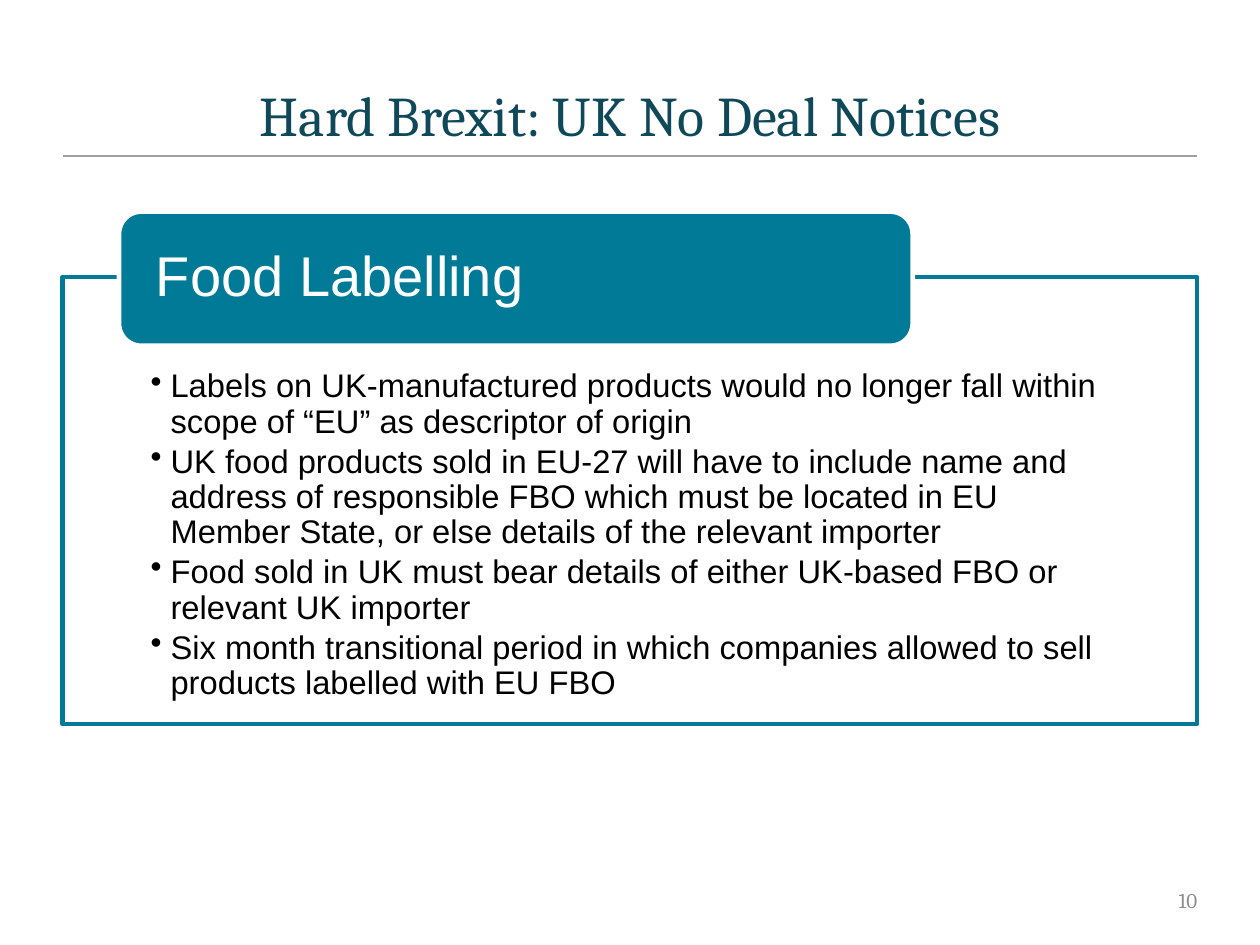
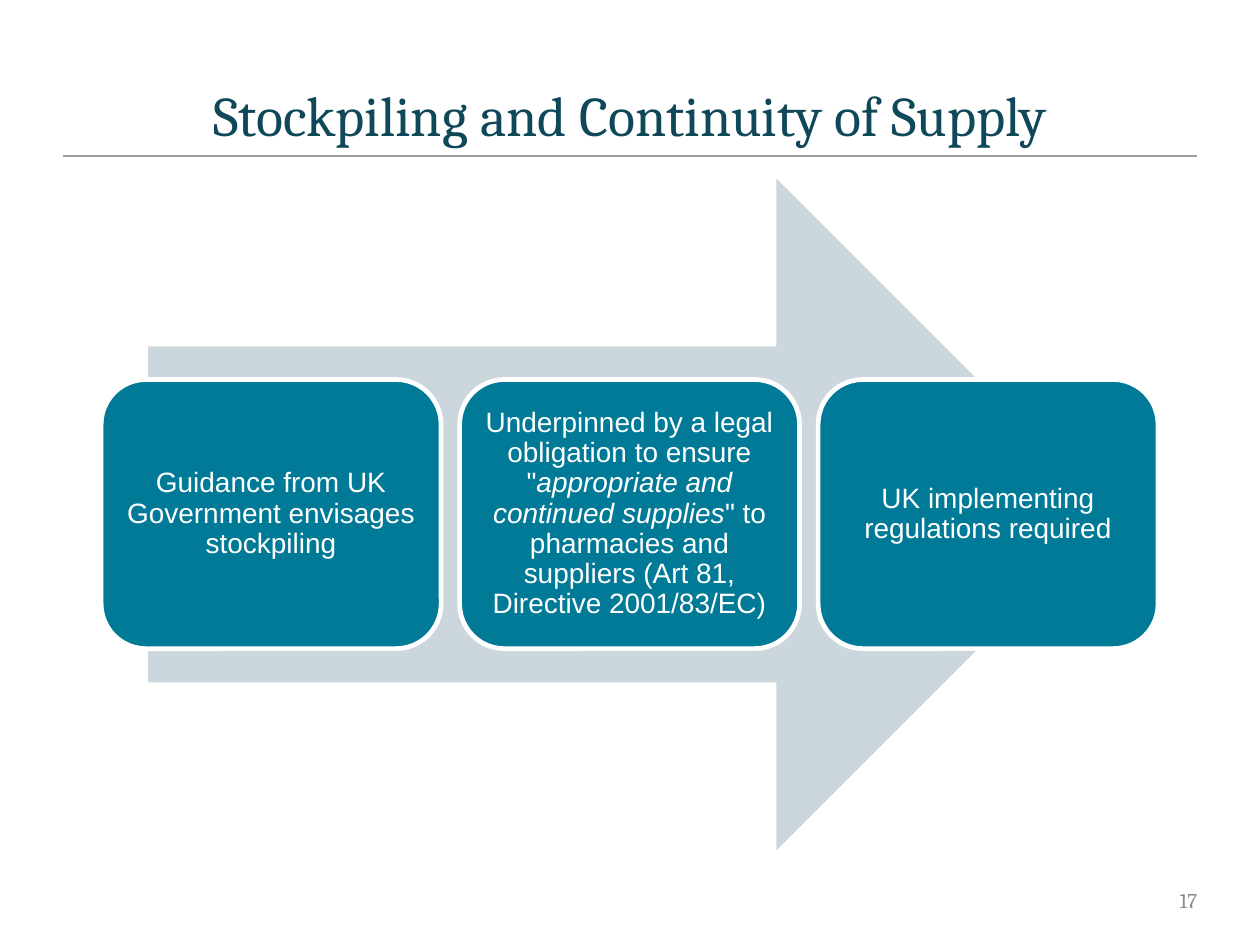
from lxml.etree import SubElement
from pptx import Presentation
from pptx.dml.color import RGBColor
from pptx.enum.shapes import MSO_CONNECTOR, MSO_SHAPE
from pptx.enum.text import MSO_ANCHOR, PP_ALIGN
from pptx.oxml.ns import qn
from pptx.util import Cm, Pt

COLORS = {
    "title": "0F4859",
    "rule": "A0A0A0",
    "number": "8C8C8C",
    "teal": "007A96",
    "arrow": "CCD7DD",
    "white": "FFFFFF",
    "black": "000000",
}
HEADING_FONT = "Cambria"
BODY_FONT = "Arial"
LEFT, WIDTH = 0.95, 17.15
RULE_TOP = 2.36

LABEL_RULES = [
    "Labels on UK-manufactured products would no longer fall within scope of “EU” as descriptor of origin",
    "UK food products sold in EU-27 will have to include name and address of responsible FBO "
    "which must be located in EU Member State, or else details of the relevant importer",
    "Food sold in UK must bear details of either UK-based FBO or relevant UK importer",
    "Six month transitional period in which companies allowed to sell products labelled with EU FBO",
]
# Each step is a list of (text, italic) spans.
SUPPLY_STEPS = [
    [("Guidance from UK Government envisages stockpiling", False)],
    [
        ('Underpinned by a legal obligation to ensure "', False),
        ("appropriate and continued supplies", True),
        ('" to pharmacies and suppliers (Art 81, Directive 2001/83/EC)', False),
    ],
    [("UK implementing regulations required", False)],
]


def rgb(name):
    return RGBColor.from_string(COLORS[name])


def style(para, font, size, color, align=PP_ALIGN.LEFT, spacing=None):
    para.font.name = font
    para.font.size = Pt(size)
    para.font.color.rgb = rgb(color)
    para.alignment = align
    if spacing:
        para.line_spacing = spacing


def set_frame(frame, anchor, insets):
    """Wrap the text and set its anchor and left, top, right, bottom insets in cm."""
    frame.word_wrap = True
    frame.vertical_anchor = anchor
    frame.margin_left, frame.margin_top, frame.margin_right, frame.margin_bottom = map(Cm, insets)


def add_text(page, text, place, size, color, align, anchor, insets):
    box = page.shapes.add_textbox(*map(Cm, place))
    set_frame(box.text_frame, anchor, insets)
    para = box.text_frame.paragraphs[0]
    para.text = text
    style(para, HEADING_FONT, size, color, align)


def add_block(page, kind, place, fill, line=None):
    block = page.shapes.add_shape(kind, *map(Cm, place))
    block.shadow.inherit = False
    block.fill.solid()
    block.fill.fore_color.rgb = rgb(fill)
    if line:
        block.line.color.rgb = rgb(line)
        block.line.width = Pt(2)
    else:
        block.line.fill.background()
    return block


def add_bullet(para):
    properties = para._p.get_or_add_pPr()
    properties.set("marL", str(Cm(0.3)))
    properties.set("indent", str(Cm(-0.3)))
    SubElement(properties, qn("a:buChar")).set("char", "•")


def add_page(deck, title, number):
    """Add a blank page with the shared title, rule and page number."""
    page = deck.slides.add_slide(deck.slide_layouts[6])
    rule = page.shapes.add_connector(
        MSO_CONNECTOR.STRAIGHT, Cm(LEFT), Cm(RULE_TOP), Cm(LEFT + WIDTH), Cm(RULE_TOP))
    rule.line.color.rgb = rgb("rule")
    rule.line.width = Pt(1)
    SubElement(rule._element.spPr, qn("a:effectLst"))
    add_text(page, title, (LEFT, 1.09, WIDTH, 1.27), 24, "title",
             PP_ALIGN.CENTER, MSO_ANCHOR.TOP, (0.25, 0.13, 0.25, 0.13))
    add_text(page, str(number), (13.82, 13.23, 4.28, 0.76), 9, "number",
             PP_ALIGN.RIGHT, MSO_ANCHOR.MIDDLE, (0.25, 0.13, 0, 0.13))
    return page


def add_bullet_panel(page, items):
    panel = add_block(page, MSO_SHAPE.RECTANGLE, (LEFT, 4.19, WIDTH, 6.76), "white", "teal")
    frame = panel.text_frame
    set_frame(frame, MSO_ANCHOR.TOP, (1.33, 1.4, 1.33, 0.28))
    for index, item in enumerate(items):
        para = frame.add_paragraph() if index else frame.paragraphs[0]
        para.text = item
        add_bullet(para)
        style(para, BODY_FONT, 14, "black", spacing=0.9)
        para.space_after = Pt(2)


def add_panel_header(page, text):
    header = add_block(page, MSO_SHAPE.ROUNDED_RECTANGLE, (1.8, 3.2, 12, 2.03), "teal", "white")
    set_frame(header.text_frame, MSO_ANCHOR.MIDDLE, (0.46, 0, 0.46, 0))
    para = header.text_frame.paragraphs[0]
    para.text = text
    style(para, BODY_FONT, 24, "white", spacing=0.9)


def add_step(page, left, spans):
    step = add_block(page, MSO_SHAPE.ROUNDED_RECTANGLE, (left, 5.74, 5.14, 4.07), "teal", "white")
    set_frame(step.text_frame, MSO_ANCHOR.MIDDLE, (0.13,) * 4)
    para = step.text_frame.paragraphs[0]
    for text, italic in spans:
        span = para.add_run()
        span.text = text
        if italic:
            span.font.italic = True
    style(para, BODY_FONT, 12, "white", PP_ALIGN.CENTER, 0.9)


def main():
    deck = Presentation()
    deck.slide_width, deck.slide_height = Cm(19.05), Cm(14.29)

    page = add_page(deck, "Hard Brexit: UK No Deal Notices", 10)
    add_bullet_panel(page, LABEL_RULES)
    add_panel_header(page, "Food Labelling")

    page = add_page(deck, "Stockpiling and Continuity of Supply", 17)
    add_block(page, MSO_SHAPE.RIGHT_ARROW, (2.24, 2.7, 14.58, 10.16), "arrow")
    for index, spans in enumerate(SUPPLY_STEPS):
        add_step(page, 1.53 + index * 5.42, spans)

    deck.save("out.pptx")


if __name__ == "__main__":
    main()
